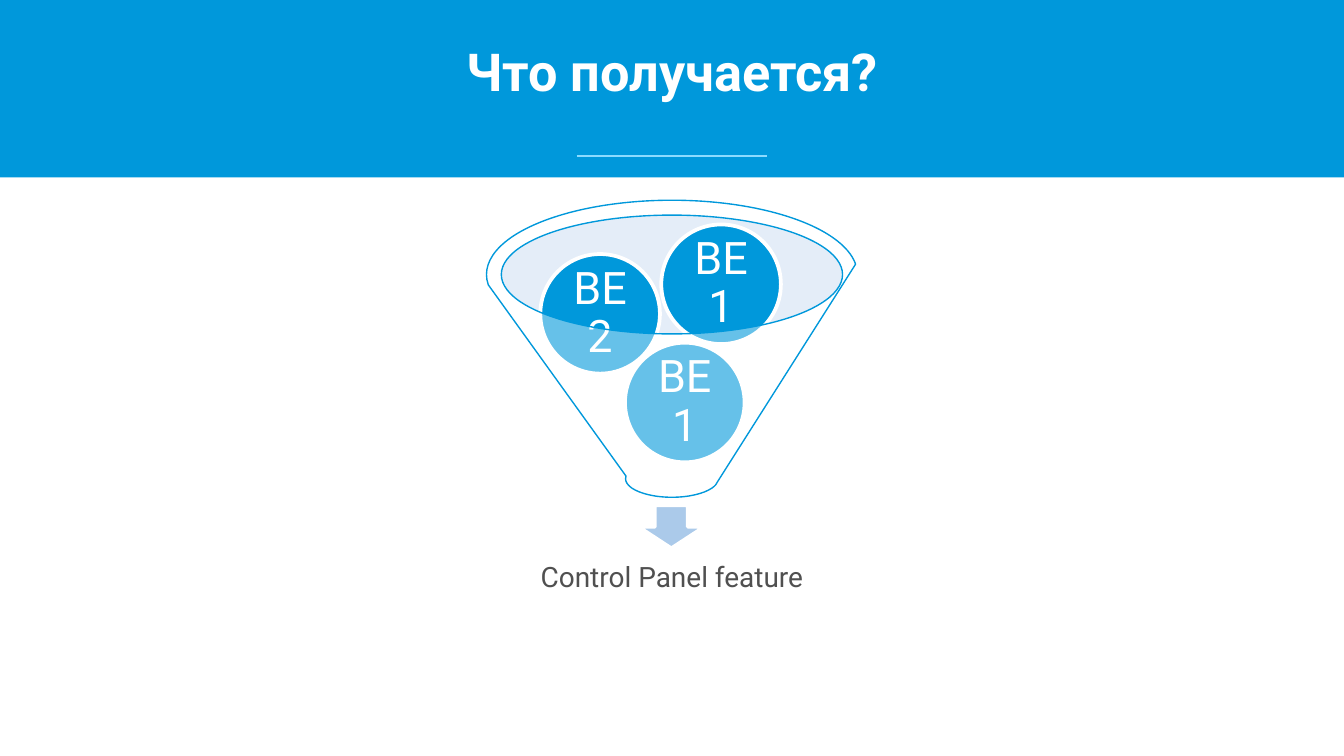
from dataclasses import dataclass
from lxml import etree
from pptx import Presentation
from pptx.dml.color import RGBColor as RGB
from pptx.enum.shapes import MSO_CONNECTOR as Link, MSO_SHAPE as Kind
from pptx.enum.text import MSO_ANCHOR as Anchor, PP_ALIGN as Align
from pptx.oxml.ns import qn
from pptx.util import Inches, Pt


@dataclass(frozen=True)
class Theme:
    """Colours, font and type sizes of the slide."""
    blue: str = "0098DB"
    rule: str = "8BDBFF"
    mouth: str = "BDD4EE"
    arrow: str = "ABCAEA"
    white: str = "FFFFFF"
    grey: str = "505050"
    font: str = "Roboto"
    head: int = 28
    ball: int = 24
    note: int = 15
    thin: float = 0.75
    edge: float = 2


THEME = Theme()


def add_shape(slide, kind, box, fill, line=None, width=0, alpha=None):
    """Draw a preset shape with plain fill, optional outline and opacity."""
    shape = slide.shapes.add_shape(kind, *map(Inches, box))
    shape.shadow.inherit = False
    shape.fill.solid()
    shape.fill.fore_color.rgb = RGB.from_string(fill)
    if alpha:
        color = shape._element.spPr.find(qn("a:solidFill"))[0]
        etree.SubElement(color, qn("a:alpha")).set("val", str(alpha * 1000))
    if line:
        shape.line.color.rgb = RGB.from_string(line)
        shape.line.width = Pt(width)
    else:
        shape.line.fill.background()
    return shape


def set_text(shape, text, size, color, inset=0, anchor=Anchor.MIDDLE, bold=False, space=None):
    """Write one centred paragraph into a shape."""
    frame = shape.text_frame
    frame.text = text
    frame.word_wrap = True
    frame.vertical_anchor = anchor
    frame.margin_left = frame.margin_right = Inches(inset)
    frame.margin_top = frame.margin_bottom = Inches(inset)
    para = frame.paragraphs[0]
    para.alignment = Align.CENTER
    para.line_spacing = space
    font = para.runs[0].font
    font.name, font.size, font.bold = THEME.font, Pt(size), bold
    font.color.rgb = RGB.from_string(color)


def add_header(slide, box, title):
    """Place the title band with its short rule."""
    left, top, width, height = box
    add_shape(slide, Kind.RECTANGLE, box, THEME.blue)
    mid, half, low = left + width / 2, 0.71, top + 1.16
    rule = slide.shapes.add_connector(
        Link.STRAIGHT, *map(Inches, (mid - half, low, mid + half, low)))
    rule.line.color.rgb = RGB.from_string(THEME.rule)
    rule.line.width = Pt(THEME.thin)
    etree.SubElement(rule._element.spPr, qn("a:effectLst"))
    pad = 0.59
    area = (left + pad, top + 0.29, width - 2 * pad, 0.39)
    label = slide.shapes.add_textbox(*map(Inches, area))
    set_text(label, title, THEME.head, THEME.white, anchor=Anchor.TOP, bold=True)


def add_funnel(slide, box, balls, result):
    """Place the funnel, the balls inside it, the arrow and the result."""
    left, top, width, height = box
    mid, size = left + width / 2, 0.89
    rim = 0.11
    add_shape(slide, Kind.OVAL, (left + rim, top + rim, width - 2 * rim, 0.88),
              THEME.mouth, alpha=40)
    add_shape(slide, Kind.DOWN_ARROW, (mid - 0.25, top + height + 0.06, 0.49, 0.32),
              THEME.arrow, THEME.white, THEME.edge)
    area = (mid - 1.18, top + height + 0.31, 2.36, 0.59)
    label = slide.shapes.add_textbox(*map(Inches, area))
    set_text(label, result, THEME.note, THEME.grey, 0.12, space=0.9)
    for text, dx, dy in balls:
        ball = add_shape(slide, Kind.OVAL, (left + dx, top + dy, size, size),
                         THEME.blue, THEME.white, THEME.edge)
        set_text(ball, text, THEME.ball, THEME.white, 0.03, space=0.9)
    add_shape(slide, Kind.FUNNEL, box, THEME.white, THEME.blue, THEME.thin, 40)


def main():
    """Build and save the slide."""
    deck = Presentation()
    deck.slide_width = Inches(10)
    deck.slide_height = deck.slide_width * 9 // 16
    slide = deck.slides.add_slide(deck.slide_layouts[6])
    add_header(slide, (0, 0, 10, 1.32), "Что получается?")
    balls = [("BE1", 1.03, 1.06), ("BE2", 0.4, 0.4), ("BE1", 1.3, 0.18)]
    add_funnel(slide, (3.62, 1.49, 2.76, 2.21), balls, "Control Panel feature")
    deck.save("out.pptx")


if __name__ == "__main__":
    main()
